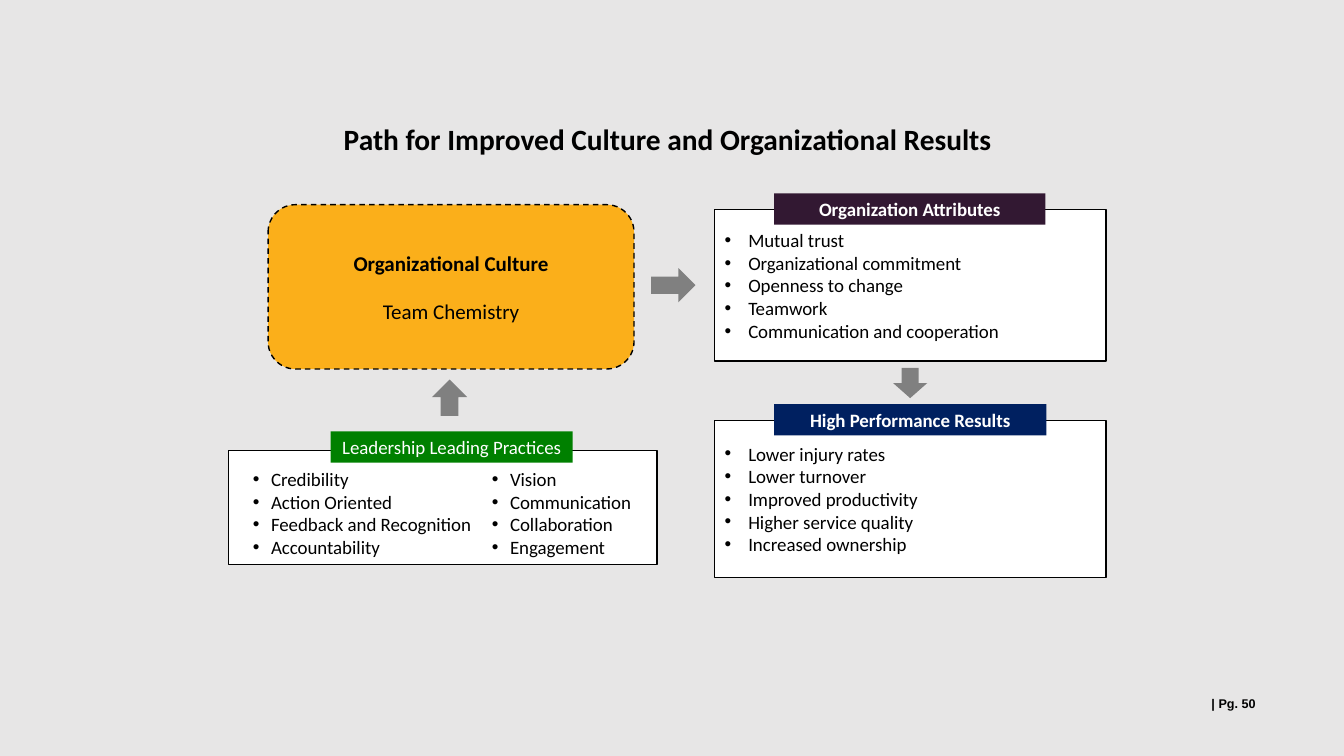
from lxml import etree
from pptx import Presentation
from pptx.dml.color import RGBColor
from pptx.enum import dml, shapes, text
from pptx.oxml import ns
from pptx.util import Pt

COLORS = {
    "background": "E7E6E6", "black": "000000", "white": "FFFFFF", "arrow": "808080",
    "culture": "FBAF1A", "attributes": "321832", "results": "002060", "leadership": "008000",
}
TITLE = ("Path for Improved Culture and Organizational Results", (238.3, 82.8, 481.7, 32.4))
PAGE = ("| Pg. 50", (861.8, 488.2, 67.7, 28.8))
CULTURE = (["Organizational Culture", "Team Chemistry"], (191.5, 146.2, 261.4, 117.4))

# Each panel: heading, heading color, heading bold, heading box, panel box, panel bullets
PANELS = [
    ("Organization Attributes", "attributes", True,
     (553, 138.2, 193.7, 22.3), (510.5, 149.8, 279.4, 108),
     ["Mutual trust", "Organizational commitment", "Openness to change", "Teamwork",
      "Communication and cooperation"]),
    ("High Performance Results", "results", True,
     (553, 288.7, 194.4, 22.3), (510.5, 300.2, 279.4, 112.3),
     ["Lower injury rates", "Lower turnover", "Improved productivity",
      "Higher service quality", "Increased ownership"]),
    ("Leadership Leading Practices", "leadership", False,
     (236.2, 308.2, 172.8, 22.3), (163.4, 321.8, 306, 81.4), []),
]
PRACTICES = [
    (["Credibility", "Action Oriented", "Feedback and Recognition", "Accountability"],
     (173.5, 330.5, 173.5, 72.7)),
    (["Vision", "Communication", "Collaboration", "Engagement"],
     (344.2, 330.5, 115.9, 72.7)),
]
ARROWS = [
    (shapes.MSO_SHAPE.UP_ARROW, (308.5, 271.1, 25.2, 25.9)),
    (shapes.MSO_SHAPE.DOWN_ARROW, (637.9, 262.8, 24.5, 21.6)),
    (shapes.MSO_SHAPE.RIGHT_ARROW, (465.1, 191.5, 31.7, 24.5)),
]
BODY = {"name": "Calibri", "size": Pt(13.5), "bold": False}
CENTER = text.PP_ALIGN.CENTER
LEFT = text.PP_ALIGN.LEFT
MIDDLE = text.MSO_ANCHOR.MIDDLE
TOP = text.MSO_ANCHOR.TOP


def rgb(color):
    return RGBColor.from_string(COLORS[color])


def points(box):
    return [Pt(value) for value in box]


def add_bullet(paragraph, indent):
    properties = paragraph._p.get_or_add_pPr()
    properties.set("marL", str(Pt(indent)))
    properties.set("indent", str(-Pt(indent)))
    font = etree.SubElement(properties, ns.qn("a:buFont"))
    font.set("typeface", "Arial")
    etree.SubElement(properties, ns.qn("a:buChar")).set("char", "•")


def write(shape, lines, color="black", align=LEFT, anchor=TOP, wrap=True, indent=0, **font):
    frame = shape.text_frame
    frame.text = "\n".join(lines)
    frame.word_wrap = wrap
    frame.vertical_anchor = anchor
    for paragraph in frame.paragraphs:
        paragraph.alignment = align
        if indent:
            add_bullet(paragraph, indent)
        for run in paragraph.runs:
            for name, value in {**BODY, **font}.items():
                setattr(run.font, name, value)
            run.font.color.rgb = rgb(color)
    return frame


def add_block(slide, kind, box, fill, outlined=False):
    shape = slide.shapes.add_shape(kind, *points(box))
    shape.shadow.inherit = False
    shape.fill.solid()
    shape.fill.fore_color.rgb = rgb(fill)
    if outlined:
        shape.line.color.rgb = rgb("black")
        shape.line.width = Pt(1)
    else:
        shape.line.fill.background()
    return shape


def add_title(slide):
    wording, box = TITLE
    title = slide.shapes.title
    title.left, title.top, title.width, title.height = points(box)
    frame = write(title, [wording], wrap=False, size=Pt(21), bold=True)
    frame.auto_size = text.MSO_AUTO_SIZE.NONE


def add_culture(slide):
    lines, box = CULTURE
    shape = add_block(slide, shapes.MSO_SHAPE.ROUNDED_RECTANGLE, box, "culture", outlined=True)
    shape.line.dash_style = dml.MSO_LINE.DASH
    frame = write(shape, lines, align=CENTER, anchor=MIDDLE, size=Pt(15))
    heading, detail = frame.paragraphs
    heading.runs[0].font.bold = True
    detail.space_before = Pt(16)


def add_panels(slide):
    rectangle = shapes.MSO_SHAPE.RECTANGLE
    for heading, color, bold, heading_box, panel_box, bullets in PANELS:
        panel = add_block(slide, rectangle, panel_box, "white", outlined=True)
        if bullets:
            write(panel, bullets, anchor=MIDDLE, indent=16.9)
        label = add_block(slide, rectangle, heading_box, color)
        write(label, [heading], "white", CENTER, MIDDLE, bold=bold)


def add_practices(slide):
    for bullets, box in PRACTICES:
        column = slide.shapes.add_textbox(*points(box))
        write(column, bullets, wrap=False, indent=13)


def add_page_number(slide):
    wording, box = PAGE
    shape = slide.shapes.add_textbox(*points(box))
    frame = write(shape, [wording], anchor=MIDDLE, name="Arial", size=Pt(9), bold=True)
    frame.margin_left = Pt(3.6)


def main():
    presentation = Presentation()
    presentation.slide_width, presentation.slide_height = Pt(960), Pt(540)
    slide = presentation.slides.add_slide(presentation.slide_layouts.get_by_name("Title Only"))
    slide.background.fill.solid()
    slide.background.fill.fore_color.rgb = rgb("background")
    add_title(slide)
    add_culture(slide)
    add_panels(slide)
    add_practices(slide)
    for kind, box in ARROWS:
        add_block(slide, kind, box, "arrow")
    add_page_number(slide)
    presentation.save("out.pptx")


if __name__ == "__main__":
    main()
